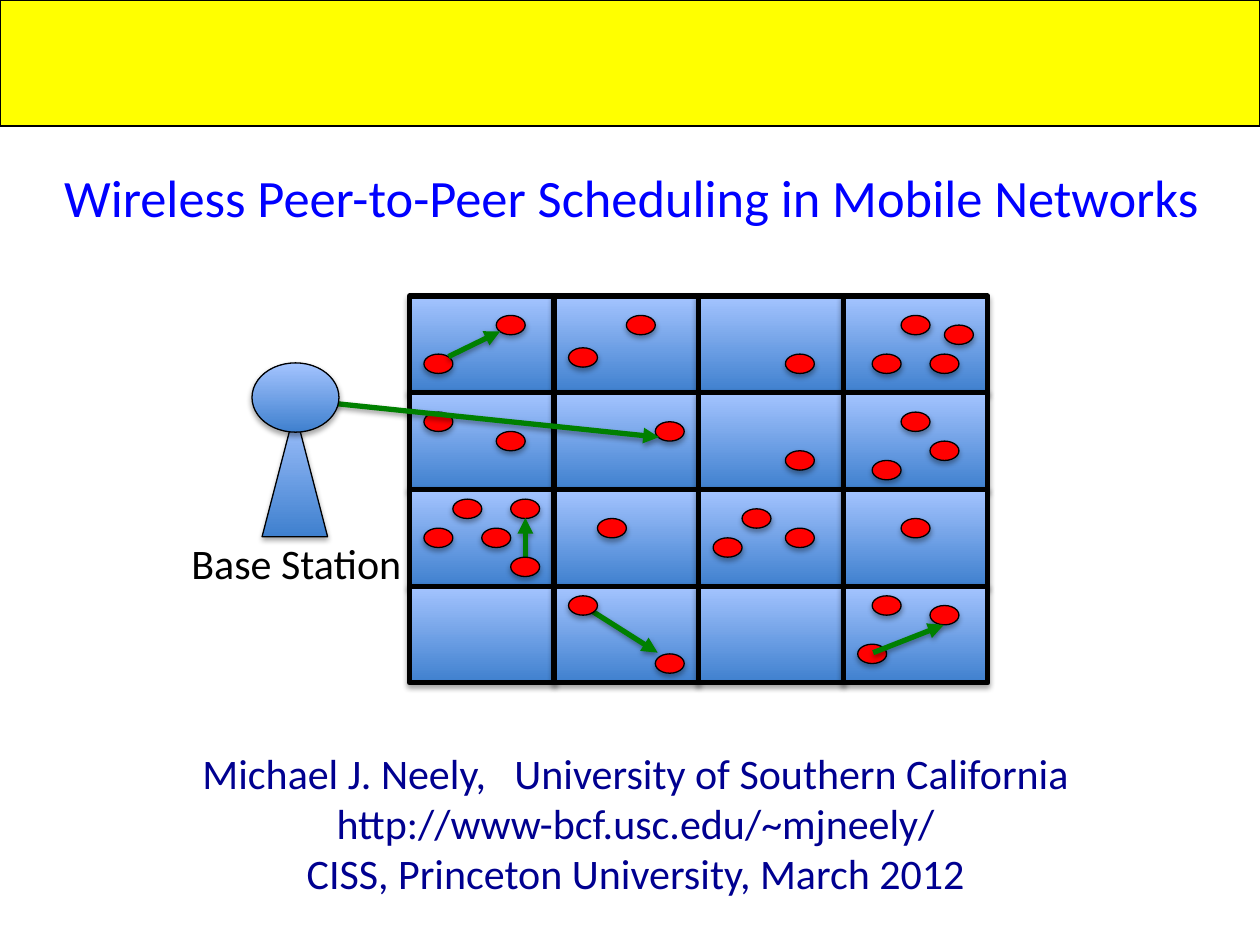
from lxml import etree
from pptx import Presentation
from pptx.dml.color import RGBColor
from pptx.enum.shapes import MSO_CONNECTOR as LINE, MSO_SHAPE as SHAPE
from pptx.enum.text import PP_ALIGN as ALIGN
from pptx.oxml.ns import qn
from pptx.util import Inches, Pt

BLACK = RGBColor(0x00, 0x00, 0x00)
YELLOW = RGBColor(0xFF, 0xFF, 0x00)
BLUE = RGBColor(0x00, 0x00, 0xFF)
NAVY = RGBColor(0x00, 0x00, 0x90)
RED = RGBColor(0xFF, 0x00, 0x00)
GREEN = RGBColor(0x00, 0x80, 0x00)
SKY_DARK = RGBColor(0x3F, 0x80, 0xCE)
SKY_LIGHT = RGBColor(0xA4, 0xC4, 0xFF)

# Users in each cell (row, column), offset in tenths of a cell
USERS = {
    (0, 0): [(1, 6), (6, 2)],
    (0, 1): [(1, 5.35), (5, 2)],
    (0, 2): [(6, 6)],
    (0, 3): [(2, 6), (4, 2), (6, 6), (7, 3)],
    (1, 0): [(1, 2), (6, 4)],
    (1, 1): [(7, 3)],
    (1, 2): [(6, 6)],
    (1, 3): [(4, 2), (6, 5), (2, 7)],
    (2, 0): [(1, 4), (3, 1), (5, 4), (7, 1)],
    (2, 1): [(3, 3)],
    (2, 2): [(1, 5), (3, 2), (6, 4)],
    (2, 3): [(4, 3)],
    (3, 1): [(7, 7)],
    (3, 3): [(6, 2), (1, 6), (2, 1)],
}
# Users drawn over the start of their arrow
SENDERS = {(2, 0): [(7, 7)], (3, 1): [(1, 1)]}
# Peer-to-peer transfers in inches from the grid's corner
TRANSFERS = [
    ((0.31, 0.48), (0.72, 0.28)),
    ((1.37, 2.45), (1.97, 2.83)),
    ((3.68, 2.83), (4.24, 2.61)),
    ((0.92, 2.15), (0.92, 1.76)),
]


def add_shadow(sp, alpha, dist):
    spPr = sp._element.spPr
    effects = etree.SubElement(spPr, qn("a:effectLst"))
    shadow = etree.SubElement(effects, qn("a:outerShdw"), blurRad=str(Pt(3.1)),
                              dist=str(Pt(dist)), dir="5400000", rotWithShape="0")
    color = etree.SubElement(shadow, qn("a:srgbClr"), val=str(BLACK))
    etree.SubElement(color, qn("a:alpha"), val=str(alpha * 1000))


def add_box(shapes, kind, box, fill=None, line=0.75, shadow=True):
    """Add an outlined shape; without a fill colour it gets the sky gradient."""
    sp = shapes.add_shape(kind, *map(Inches, box))
    if fill is None:
        sp.fill.gradient()
        sp.fill.gradient_angle = 90
        for stop, color in zip(sp.fill.gradient_stops, (SKY_DARK, SKY_LIGHT)):
            stop.color.rgb = color
    else:
        sp.fill.solid()
        sp.fill.fore_color.rgb = fill
    sp.line.color.rgb = BLACK
    sp.line.width = Pt(line)
    if shadow:
        add_shadow(sp, 35, 1.8)
    else:
        sp.shadow.inherit = False
    return sp


def add_arrow(shapes, start, end):
    c = shapes.add_connector(LINE.STRAIGHT, *map(Inches, (*start, *end)))
    c.line.color.rgb = GREEN
    c.line.width = Pt(3)
    etree.SubElement(c.line._get_or_add_ln(), qn("a:tailEnd"), type="triangle")
    add_shadow(c, 38, 1.6)


def add_text(slide, box, lines, size, color, align=ALIGN.CENTER, **frame):
    tf = slide.shapes.add_textbox(*map(Inches, box)).text_frame
    for name, value in frame.items():
        setattr(tf, name, value)
    font = {"name": "Calibri", "size": Pt(size)}
    for i, line in enumerate(lines):
        p = tf.paragraphs[0] if i == 0 else tf.add_paragraph()
        p.alignment = align
        r = p.add_run()
        r.text = line
        for name, value in font.items():
            setattr(r.font, name, value)
        r.font.color.rgb = color


def add_users(shapes, users, left, top, cell_w, cell_h):
    for (row, col), offsets in users.items():
        for dx, dy in offsets:
            x = left + (col + dx / 10) * cell_w
            y = top + (row + dy / 10) * cell_h
            add_box(shapes, SHAPE.OVAL, (x, y, cell_w / 5, cell_h / 5), RED)


def add_network(slide, left, top, width, height, rows=4, cols=4):
    shapes = slide.shapes.add_group_shape().shapes
    cell_w, cell_h = width / cols, height / rows
    for row in range(rows):
        for col in range(cols):
            cell = (left + col * cell_w, top + row * cell_h, cell_w, cell_h)
            add_box(shapes, SHAPE.RECTANGLE, cell, line=3)
    add_users(shapes, USERS, left, top, cell_w, cell_h)
    for (x1, y1), (x2, y2) in TRANSFERS:
        add_arrow(shapes, (left + x1, top + y1), (left + x2, top + y2))
    add_users(shapes, SENDERS, left, top, cell_w, cell_h)


def add_mast(slide, left, top):
    add_box(slide.shapes, SHAPE.ISOSCELES_TRIANGLE, (left + 0.08, top + 0.38, 0.52, 1))
    add_text(slide, (left - 0.58, top + 1.34, 1.89, 0.5), ["Base Station"],
             24, BLACK, ALIGN.LEFT, word_wrap=False)


def add_antenna(slide, left, top):
    """Downlink arrow with the antenna head over its start."""
    add_arrow(slide.shapes, (left + 0.44, top + 0.3), (left + 3.23, top + 0.59))
    add_box(slide.shapes, SHAPE.OVAL, (left, top, 0.69, 0.55))


def main():
    prs = Presentation()
    prs.slide_width, prs.slide_height = Inches(10), Inches(7.5)
    slide = prs.slides.add_slide(prs.slide_layouts[6])

    # Author lines
    add_text(slide, (0.17, 5.75, 9.75, 1.6),
             ["Michael J. Neely,   University of Southern California",
              "http://www-bcf.usc.edu/~mjneely/",
              "CISS, Princeton University, March 2012"],
             24, NAVY, word_wrap=True, margin_top=Inches(0.18))

    # Banner and title
    add_box(slide.shapes, SHAPE.RECTANGLE, (0, 0, 10, 1), YELLOW, shadow=False)
    add_text(slide, (0.34, 1.26, 9.35, 0.61),
             ["Wireless Peer-to-Peer Scheduling in Mobile Networks"],
             30, BLUE, word_wrap=False)

    # Base station and cell grid
    add_mast(slide, 2, 2.88)
    add_network(slide, 3.25, 2.35, 4.59, 3.07)
    add_antenna(slide, 2, 2.88)

    prs.save("out.pptx")


if __name__ == "__main__":
    main()
